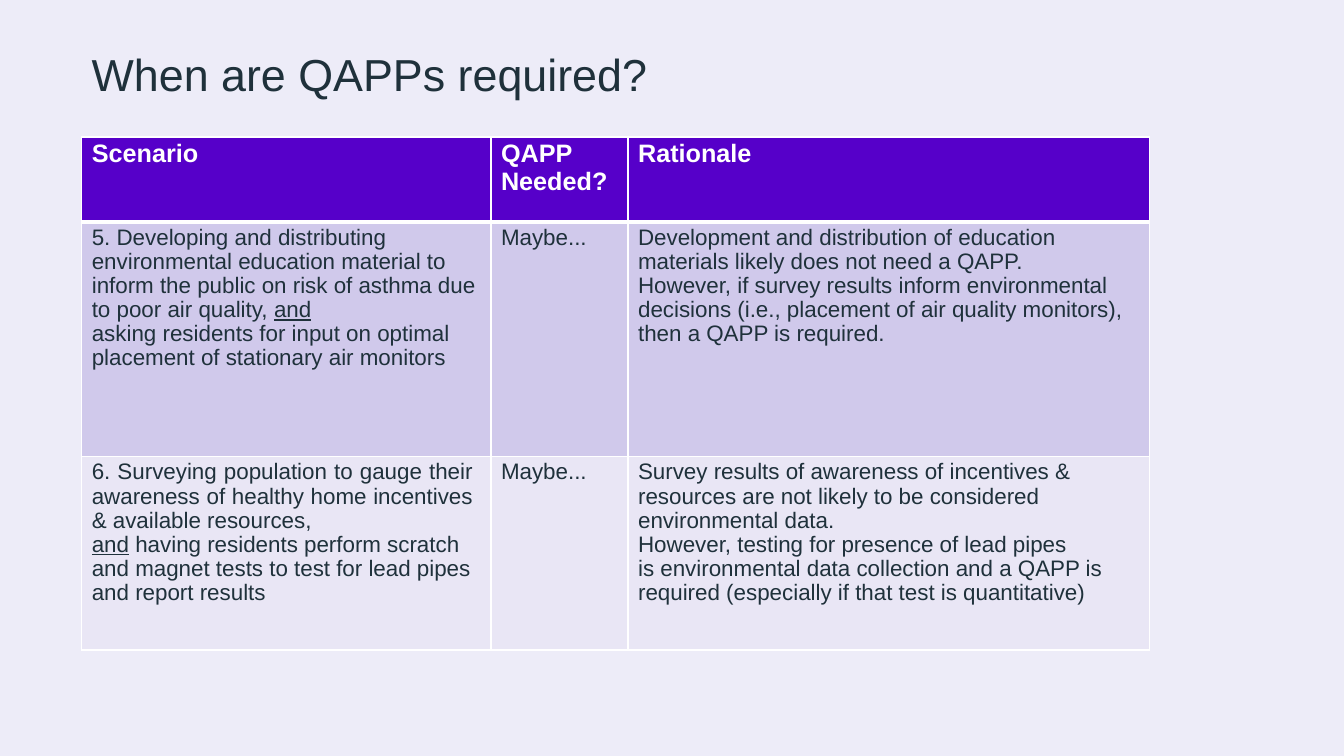
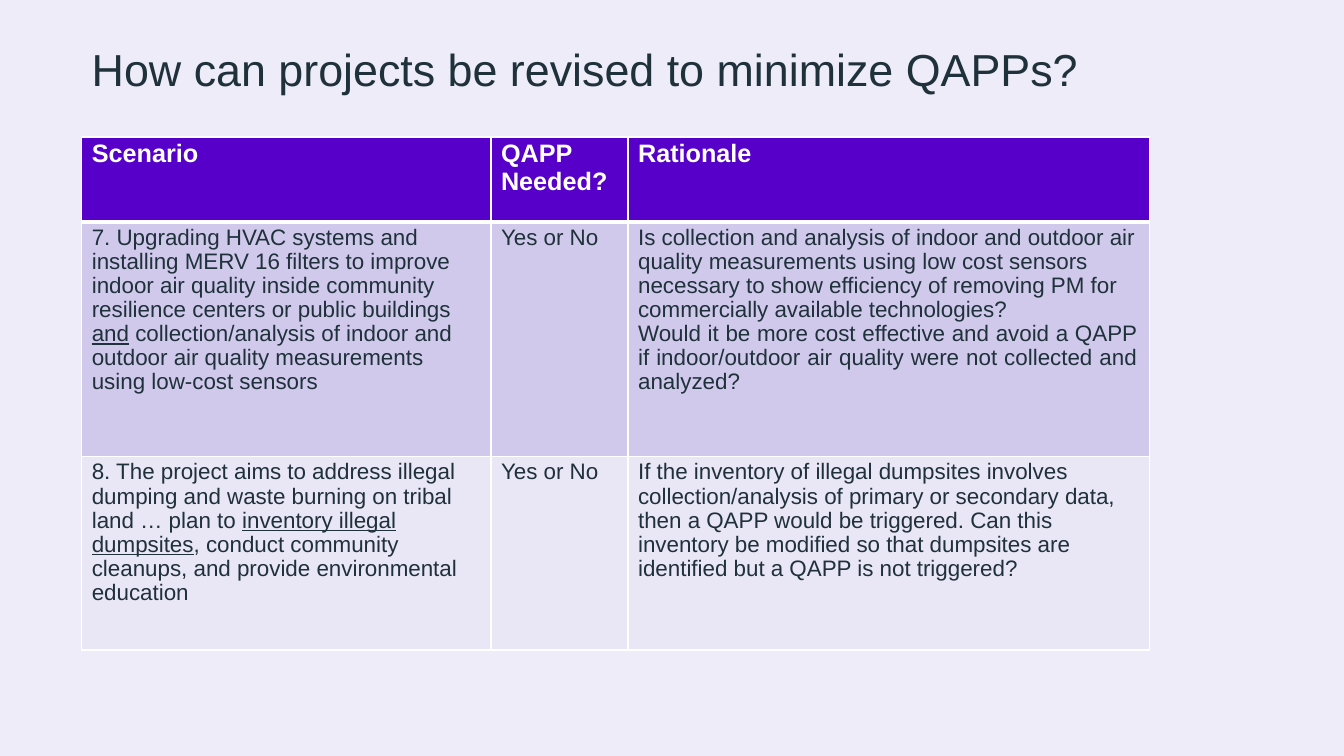
from lxml import etree
from pptx import Presentation
from pptx.dml.color import RGBColor
from pptx.enum.text import MSO_ANCHOR as Anchor, MSO_AUTO_SIZE as AutoSize, PP_ALIGN as Align
from pptx.oxml.ns import qn
from pptx.util import Inches, Pt

# Shared look
LAVENDER = RGBColor(0xED, 0xEC, 0xF8)
VIOLET = RGBColor(0x56, 0x00, 0xC9)
BAND_DARK = RGBColor(0xD0, 0xC9, 0xEB)
BAND_LIGHT = RGBColor(0xE9, 0xE6, 0xF5)
INK = RGBColor(0x1F, 0x31, 0x3B)
WHITE = RGBColor(0xFF, 0xFF, 0xFF)

TITLE_FONT = {"name": "Arial", "size": Pt(32), "bold": False}
HEAD_FONT = {"name": "Arial", "size": Pt(18), "bold": True}
BODY_FONT = {"name": "Arial", "size": Pt(16), "bold": False}
ROW_STYLES = [(VIOLET, WHITE, HEAD_FONT), (BAND_DARK, INK, BODY_FONT), (BAND_LIGHT, INK, BODY_FONT)]

# Percent shares of the slide's width and height
COLUMN_SHARES = [30.45, 10.2, 38.78]
ROW_SHARES = [11.2, 31.07, 25.6]

HEADINGS = [["Scenario"], ["QAPP", "Needed?"], ["Rationale"]]
HEAD_GAPS = [0, 0, 0]

# Each page: title, title inset, then rows of (cells, right gaps in inches).
# A cell is a list of paragraphs; _ encloses underlined words, > starts a justified paragraph.
PAGES = [
    ("When are QAPPs required?", 0.11, [
        ([["5. Developing and distributing environmental education material to inform the public "
           "on risk of asthma due to poor air quality, _and_",
           "asking residents for input on optimal placement of stationary air monitors"],
          ["Maybe..."],
          ["Development and distribution of education materials likely does not need a QAPP.",
           "However, if survey results inform environmental decisions (i.e., placement of air "
           "quality monitors), then a QAPP is required."]], [0.12, 0, 0.12]),
        ([[">6. Surveying population to gauge their awareness of healthy home incentives "
           "& available resources,",
           "_and_ having residents perform scratch and magnet tests to test for lead pipes "
           "and report results"],
          ["Maybe..."],
          ["Survey results of awareness of incentives & resources are not likely to be considered "
           "environmental data.",
           "However, testing for presence of lead pipes",
           "is environmental data collection and a QAPP is required (especially if that test is "
           "quantitative)"]], [0.18, 0, 0.12]),
    ]),
    ("How can projects be revised to minimize QAPPs?", 0.06, [
        ([["7. Upgrading HVAC systems and installing MERV 16 filters to improve indoor air quality "
           "inside community resilience centers or public buildings _and_ collection/analysis of "
           "indoor and outdoor air quality measurements using low-cost sensors"],
          ["Yes or No"],
          ["Is collection and analysis of indoor and outdoor air quality measurements using low "
           "cost sensors necessary to show efficiency of removing PM for commercially available "
           "technologies?",
           ">Would it be more cost effective and avoid a QAPP if indoor/outdoor air quality were "
           "not collected and analyzed?"]], [0.25, 0, 0.12]),
        ([["8. The project aims to address illegal dumping and waste burning on tribal land … plan "
           "to _inventory illegal dumpsites_, conduct community cleanups, and provide "
           "environmental education"],
          ["Yes or No"],
          ["If the inventory of illegal dumpsites involves collection/analysis of primary or "
           "secondary data, then a QAPP would be triggered. Can this inventory be modified so that "
           "dumpsites are identified but a QAPP is not triggered?"]], [0.25, 0, 0.3]),
    ]),
]


def write_paragraph(para, text, color, formats):
    para.alignment = Align.JUSTIFY if text.startswith(">") else Align.LEFT
    para.space_before = Pt(0)
    for index, piece in enumerate(text.lstrip(">").split("_")):
        if piece:
            span = para.add_run()
            span.text = piece
            span.font.color.rgb = color
            span.font.underline = index % 2 == 1
            for key, value in formats.items():
                setattr(span.font, key, value)


def add_borders(cell, widths):
    properties = cell._tc.get_or_add_tcPr()
    for index, (side, points) in enumerate(zip("LRTB", widths)):
        line = etree.Element(qn(f"a:ln{side}"), w=str(Pt(points)))
        fill = etree.SubElement(line, qn("a:solidFill"))
        etree.SubElement(fill, qn("a:srgbClr"), val=str(WHITE))
        properties.insert(index, line)


# Deck, background and title position
deck = Presentation()
deck.slide_width, deck.slide_height = Inches(13.33), Inches(7.5)
across, down = deck.slide_width / 100, deck.slide_height / 100
background = deck.slide_master.background.fill
background.solid()
background.fore_color.rgb = LAVENDER
layout = deck.slide_layouts.get_by_name("Title Only")
title_place = {"left": int(6.75 * across), "top": int(4.67 * down),
               "width": int(86.57 * across), "height": int(10.13 * down)}
for key, value in title_place.items():
    setattr(layout.placeholders[0], key, value)

for title, title_inset, body_rows in PAGES:
    page = deck.slides.add_slide(layout)

    # Title
    frame = page.shapes.title.text_frame
    title_frame = {"margin_left": Inches(0.01), "margin_right": 0, "margin_bottom": 0,
                   "margin_top": Inches(title_inset), "word_wrap": True,
                   "auto_size": AutoSize.NONE, "vertical_anchor": Anchor.TOP}
    for key, value in title_frame.items():
        setattr(frame, key, value)
    write_paragraph(frame.paragraphs[0], title, INK, TITLE_FONT)

    # Table grid
    table = page.shapes.add_table(
        len(ROW_SHARES), len(COLUMN_SHARES), int(6.08 * across), int(18.13 * down),
        int(sum(COLUMN_SHARES) * across), int(sum(ROW_SHARES) * down)).table
    for column, share in zip(table.columns, COLUMN_SHARES):
        column.width = int(share * across)
    for row, share in zip(table.rows, ROW_SHARES):
        row.height = int(share * down)

    # Table cells
    for r, (cells, gaps) in enumerate([(HEADINGS, HEAD_GAPS)] + body_rows):
        band, color, formats = ROW_STYLES[r]
        borders = (1, 1, 3 if r == 1 else 1, 3 if r == 0 else 1)
        for c, (texts, gap) in enumerate(zip(cells, gaps)):
            cell = table.cell(r, c)
            margins = {"margin_left": Inches(0.1), "margin_right": Inches(gap),
                       "margin_top": Inches(0.04), "margin_bottom": 0}
            for key, value in margins.items():
                setattr(cell, key, value)
            cell.fill.solid()
            cell.fill.fore_color.rgb = band
            add_borders(cell, borders)
            for index, text in enumerate(texts):
                frame = cell.text_frame
                para = frame.add_paragraph() if index else frame.paragraphs[0]
                para.line_spacing = 0.97
                write_paragraph(para, text, color, formats)

deck.save("out.pptx")
